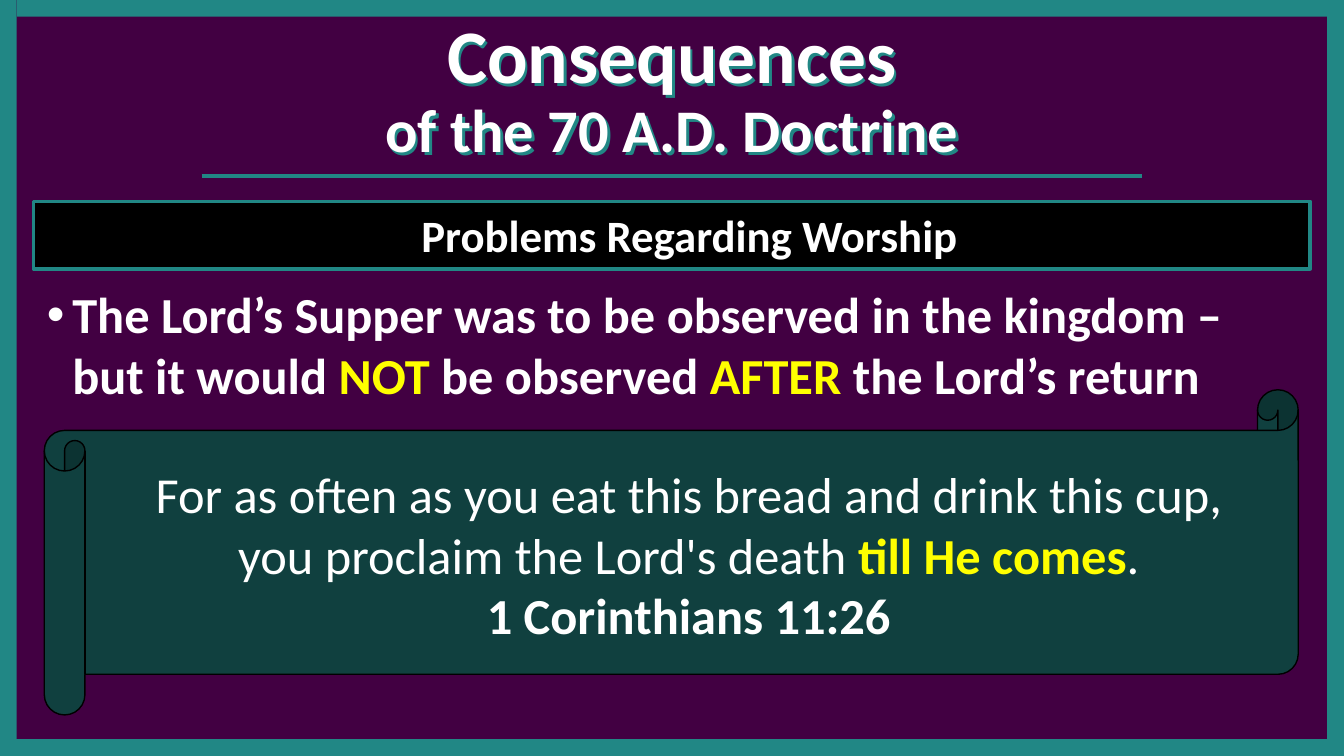
from lxml.etree import SubElement
from pptx import Presentation
from pptx.dml.color import RGBColor
from pptx.enum.shapes import MSO_CONNECTOR, MSO_SHAPE
from pptx.enum.text import MSO_ANCHOR, PP_ALIGN
from pptx.oxml.ns import qn
from pptx.util import Inches, Pt

PLUM = RGBColor(0x42, 0x00, 0x42)
TEAL = RGBColor(0x21, 0x87, 0x85)
DEEP = RGBColor(0x10, 0x40, 0x3F)
BLACK = RGBColor(0x00, 0x00, 0x00)
WHITE = RGBColor(0xFF, 0xFF, 0xFF)
YELLOW = RGBColor(0xFF, 0xFF, 0x00)

WIDE = 10
HIGH = WIDE * 9 / 16
EDGE = 1 / 8


def add_block(slide, kind, box, fill, line=None, weight=1):
    shape = slide.shapes.add_shape(kind, *map(Inches, box))
    shape.shadow.inherit = False
    shape.fill.solid()
    shape.fill.fore_color.rgb = fill
    if line is None:
        shape.line.fill.background()
    else:
        shape.line.color.rgb = line
        shape.line.width = Pt(weight)
    return shape


def add_rule(slide, left, right, top):
    rule = slide.shapes.add_connector(
        MSO_CONNECTOR.STRAIGHT, *map(Inches, (left, top, right, top)))
    rule.line.color.rgb = TEAL
    rule.line.width = Pt(2)
    SubElement(rule._element.spPr, qn("a:effectLst"))


def add_text(slide, box):
    """Add a wrapping text box and return it with its first paragraph."""
    shape = slide.shapes.add_textbox(*map(Inches, box))
    shape.text_frame.word_wrap = True
    return shape, shape.text_frame.paragraphs[0]


def set_style(para, size, bold=True, align=PP_ALIGN.CENTER):
    para.alignment = align
    para.font.name = "Calibri"
    para.font.size = Pt(size)
    para.font.bold = bold
    para.font.color.rgb = WHITE


def add_run(para, text, color=None, bold=None, size=None):
    run = para.add_run()
    run.text = text
    if color is not None:
        run.font.color.rgb = color
    if bold is not None:
        run.font.bold = bold
    if size is not None:
        run.font.size = Pt(size)


def add_bullet(para):
    props = para._p.get_or_add_pPr()
    props.set("marL", str(Inches(0.19)))
    props.set("indent", str(-Inches(0.19)))
    SubElement(props, qn("a:buFont")).set("typeface", "Arial")
    SubElement(props, qn("a:buChar")).set("char", "•")


def add_shadow(shape):
    effects = SubElement(shape._element.spPr, qn("a:effectLst"))
    shadow = SubElement(effects, qn("a:outerShdw"))
    shadow.set("dist", str(Inches(0.03)))
    shadow.set("dir", "2700000")
    SubElement(shadow, qn("a:srgbClr")).set("val", str(TEAL))


def add_title(slide):
    shape, para = add_text(slide, (1.44, 0.12, 7.12, 1.13))
    shape.text_frame.vertical_anchor = MSO_ANCHOR.MIDDLE
    set_style(para, 40.5)
    para.line_spacing = 0.9
    add_run(para, "Consequences")
    para.add_line_break()
    add_run(para, "of the 70 A.D. Doctrine", size=32.4)
    add_shadow(shape)


def add_point(slide):
    _, para = add_text(slide, (0.25, 2.06, 9.5, 3.38))
    add_bullet(para)
    set_style(para, 27, align=PP_ALIGN.LEFT)
    add_run(para, "The Lord’s Supper was to be observed in the kingdom – "
                  "but it would ")
    add_run(para, "NOT ", YELLOW)
    add_run(para, "be observed ")
    add_run(para, "AFTER ", YELLOW)
    add_run(para, "the Lord’s return")


def add_banner(slide):
    add_block(slide, MSO_SHAPE.RECTANGLE, (0.25, 1.5, 9.5, 0.5),
              BLACK, TEAL, 2)
    _, para = add_text(slide, (1.83, 1.5, 6.6, 0.5))
    set_style(para, 24)
    add_run(para, "Problems Regarding Worship")


def add_scroll(slide):
    scroll = add_block(slide, MSO_SHAPE.HORIZONTAL_SCROLL,
                       (0.33, 2.9, 9.33, 2.42), DEEP, BLACK, 0.75)
    scroll.adjustments[0] = 0.125
    _, para = add_text(slide, (0.75, 3.4, 8.75, 1.46))
    set_style(para, 27, bold=False)
    add_run(para, "For as often as you eat this bread and drink this cup, "
                  "you proclaim the Lord's death ")
    add_run(para, "till He comes", YELLOW, True)
    add_run(para, ".")
    para.add_line_break()
    add_run(para, "1 Corinthians 11:26", bold=True)


def add_frame(slide):
    for box in (
        (0, 0, EDGE, HIGH),
        (WIDE - EDGE, 0, EDGE, HIGH),
        (EDGE, 0, WIDE - 2 * EDGE, EDGE),
        (0, HIGH - EDGE, WIDE, EDGE),
    ):
        add_block(slide, MSO_SHAPE.RECTANGLE, box, TEAL)


def main():
    deck = Presentation()
    deck.slide_width = Inches(WIDE)
    deck.slide_height = Inches(HIGH)
    slide = deck.slides.add_slide(deck.slide_layouts[6])
    slide.background.fill.solid()
    slide.background.fill.fore_color.rgb = PLUM

    # Heading, main point and the rule between them
    add_title(slide)
    add_point(slide)
    add_rule(slide, 1.5, 8.5, 1.31)

    # Topic bar and quoted verse
    add_banner(slide)
    add_scroll(slide)

    # Border on all four sides
    add_frame(slide)
    deck.save("out.pptx")


if __name__ == "__main__":
    main()
